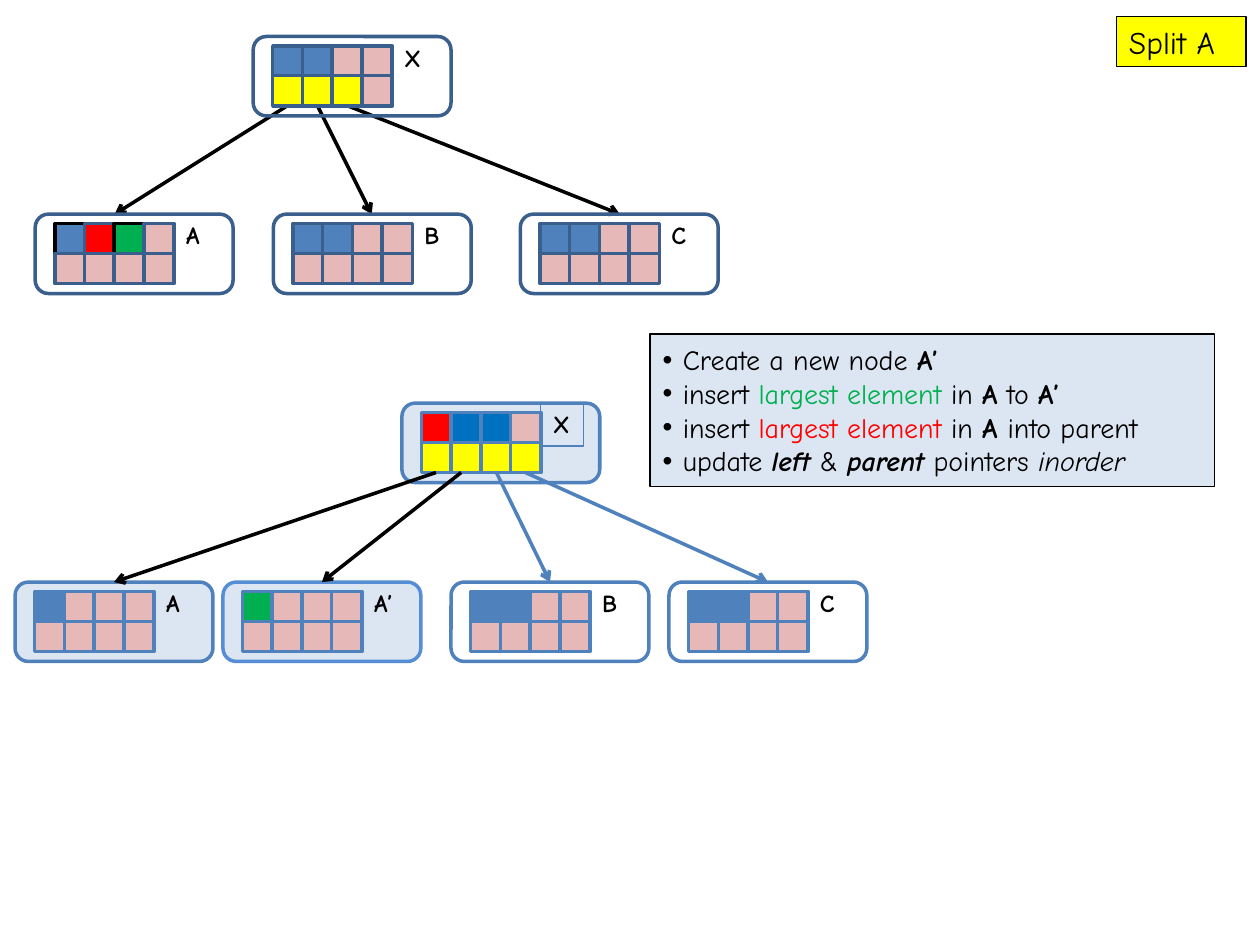
from dataclasses import dataclass

from lxml import etree
from pptx import Presentation
from pptx.dml.color import RGBColor
from pptx.enum.shapes import MSO_CONNECTOR, MSO_SHAPE
from pptx.enum.text import MSO_ANCHOR, MSO_AUTO_SIZE, PP_ALIGN
from pptx.oxml.ns import qn
from pptx.util import Inches, Pt

RECT = MSO_SHAPE.RECTANGLE
ROUND = MSO_SHAPE.ROUNDED_RECTANGLE
LINE = MSO_CONNECTOR.STRAIGHT
MIDDLE = MSO_ANCHOR.MIDDLE
FIXED = MSO_AUTO_SIZE.NONE
LEFT = PP_ALIGN.LEFT


@dataclass(frozen=True)
class Theme:
    font: str = "Comic Neue"
    head: int = 18
    body: int = 16
    label: int = 14
    thick: float = 2
    thin: float = 0.75
    black: str = "000000"
    navy: str = "3A5F8C"
    blue: str = "4F81BD"
    azure: str = "0070C0"
    sky: str = "558ED5"
    pale: str = "DCE6F2"
    pink: str = "E6B9B8"
    red: str = "FF0000"
    green: str = "00B050"
    gold: str = "FFFF00"


T = Theme()
CELLS = {"B": T.blue, "A": T.azure, "P": T.pink, "R": T.red,
         "G": T.green, "Y": T.gold}
SIDE = 0.24
STEP = 0.236
WIDE, HIGH = 1.57, 0.63

STEPS = [
    [("Create a new node ", ""), ("A’", "b")],
    [("insert ", ""), ("largest element ", "g"), ("in ", ""), ("A", "b"),
     (" to ", ""), ("A’", "b")],
    [("insert ", ""), ("largest element ", "r"), ("in ", ""), ("A ", "b"),
     ("into parent", "")],
    [("update ", ""), ("left", "bi"), (" & ", ""), ("parent", "bi"),
     (" pointers ", ""), ("inorder", "i")],
]


class Deck:
    def __init__(self, theme):
        self.theme = theme
        self.file = Presentation()
        self.file.slide_width = Inches(10)
        self.file.slide_height = Inches(7.5)
        self.slide = self.file.slides.add_slide(self.file.slide_layouts[1])
        self.group()

    def group(self):
        self.shapes = self.slide.shapes.add_group_shape().shapes

    def paint(self, shape, fill, line, width):
        if fill:
            shape.fill.solid()
            shape.fill.fore_color.rgb = RGBColor.from_string(fill)
        else:
            shape.fill.background()
        shape.line.color.rgb = RGBColor.from_string(line)
        shape.line.width = Pt(width)

    def type(self, font, size):
        font.name = self.theme.font
        font.size = Pt(size)
        font.color.rgb = RGBColor.from_string(self.theme.black)

    def place(self, holder, x, y, w, h, fill):
        holder.left, holder.top = Inches(x), Inches(y)
        holder.width, holder.height = Inches(w), Inches(h)
        self.paint(holder, fill, self.theme.black, self.theme.thin)
        frame = holder.text_frame
        frame.auto_size = FIXED
        frame.vertical_anchor = MIDDLE
        frame.word_wrap = True
        return frame

    def title(self, text, *area):
        frame = self.place(self.slide.shapes.title, *area, self.theme.gold)
        frame.text = text
        frame.paragraphs[0].alignment = LEFT
        self.type(frame.paragraphs[0].font, self.theme.head)

    def list(self, items, *area):
        frame = self.place(self.slide.placeholders[1], *area, self.theme.pale)
        tints = {"g": self.theme.green, "r": self.theme.red}
        for i, item in enumerate(items):
            para = frame.add_paragraph() if i else frame.paragraphs[0]
            props = para._p.get_or_add_pPr()
            props.set("marL", str(Inches(0.16)))
            props.set("indent", str(-Inches(0.16)))
            para.space_before = Pt(0)
            self.type(para.font, self.theme.body)
            for text, style in item:
                run = para.add_run()
                run.text = text
                if "b" in style:
                    run.font.bold = True
                if "i" in style:
                    run.font.italic = True
                if style in tints:
                    run.font.color.rgb = RGBColor.from_string(tints[style])

    def box(self, kind, x, y, w, h, fill, line):
        shape = self.shapes.add_shape(kind, Inches(x), Inches(y),
                                      Inches(w), Inches(h))
        shape.shadow.inherit = False
        self.paint(shape, fill, line, self.theme.thick)

    def label(self, text, x, y, line=None):
        box = self.shapes.add_textbox(Inches(x), Inches(y),
                                      Inches(0.29 + 0.05 * len(text)),
                                      Inches(0.34))
        if line:
            self.paint(box, None, line, self.theme.thin)
        frame = box.text_frame
        frame.word_wrap = False
        frame.text = text
        font = frame.paragraphs[0].font
        self.type(font, self.theme.label)
        font.bold = True

    def node(self, name, x, y, rows, line, fill=None, edge=None,
             frame=None, dark=()):
        self.box(ROUND, x, y, WIDE, HIGH, fill, edge or line)
        for r, row in enumerate(rows):
            for c, code in enumerate(row):
                rim = self.theme.black if (r, c) in dark else line
                self.box(RECT, x + 0.155 + c * STEP, y + 0.075 + r * STEP,
                         SIDE, SIDE, CELLS[code], rim)
        self.label(name, x + 1.1, y, frame)

    def arrow(self, x1, y1, x2, y2, color):
        line = self.shapes.add_connector(LINE, Inches(x1), Inches(y1),
                                         Inches(x2), Inches(y2))
        line.line.color.rgb = RGBColor.from_string(color)
        line.line.width = Pt(self.theme.thick)
        tail = etree.SubElement(line.line._get_or_add_ln(), qn("a:tailEnd"))
        tail.set("type", "arrow")
        etree.SubElement(line._element.spPr, qn("a:effectLst"))


def main():
    deck = Deck(T)
    deck.title("Split A", 8.86, 0.13, 1.03, 0.4)
    deck.list(STEPS, 5.16, 2.65, 4.48, 1.21)

    for start, end in ((2.28, 0.91), (2.52, 2.95), (2.76, 4.92)):
        deck.arrow(start, 0.84, end, 1.7, T.black)
    deck.node("X", 2.01, 0.29, ("BBPP", "YYYP"), T.navy)
    deck.node("A", 0.28, 1.7, ("BRGP", "PPPP"), T.navy,
              dark=((0, 0), (0, 2)))
    for name, x in (("B", 2.17), ("C", 4.13)):
        deck.node(name, x, 1.7, ("BBPP", "PPPP"), T.navy)

    deck.group()
    deck.node("X", 3.19, 3.2, ("RAAP", "YYYY"), T.blue, T.pale, frame=T.blue)
    for name, x, row, fill, edge, start, color in (
            ("A", 0.12, "BPPP", T.pale, T.blue, 3.46, T.black),
            ("A’", 1.77, "GPPP", T.pale, T.sky, 3.66, T.black),
            ("B", 3.58, "BBPP", None, T.blue, 3.94, T.blue),
            ("C", 5.31, "BBPP", None, T.blue, 4.17, T.blue)):
        deck.node(name, x, 4.62, (row, "PPPP"), T.blue, fill, edge)
        deck.arrow(start, 3.75, x + WIDE / 2, 4.62, color)

    deck.file.save("out.pptx")


if __name__ == "__main__":
    main()
